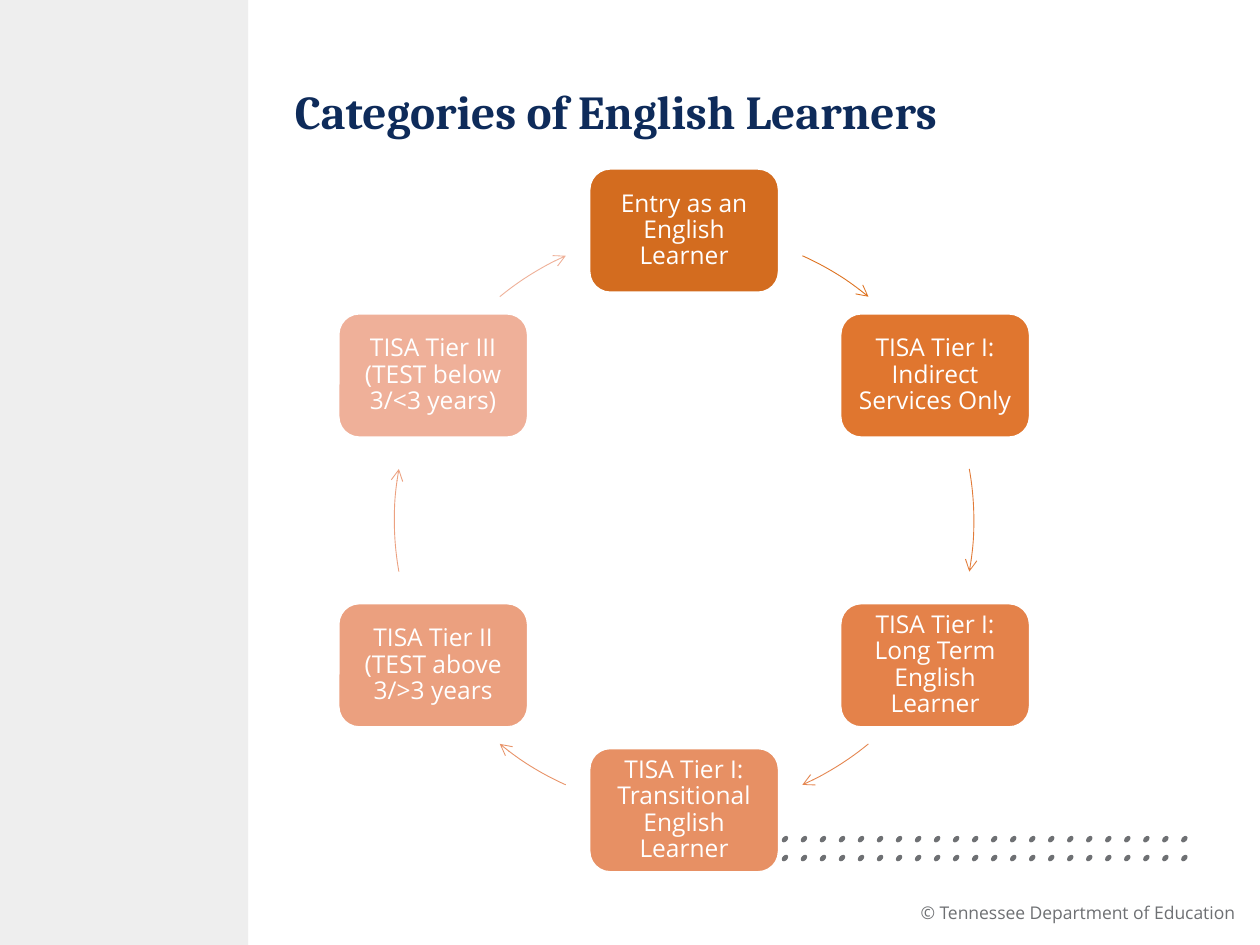
import math

from lxml import etree
from pptx import Presentation
from pptx.dml.color import RGBColor
from pptx.enum.shapes import MSO_SHAPE
from pptx.enum.text import MSO_ANCHOR, PP_ALIGN
from pptx.oxml.ns import qn
from pptx.util import Inches, Pt

RECTANGLE, ELLIPSE = MSO_SHAPE.RECTANGLE, MSO_SHAPE.OVAL
ROUNDED, ARC = MSO_SHAPE.ROUNDED_RECTANGLE, MSO_SHAPE.ARC
LEFT, CENTER, RIGHT = PP_ALIGN.LEFT, PP_ALIGN.CENTER, PP_ALIGN.RIGHT
MIDDLE, TOP = MSO_ANCHOR.MIDDLE, MSO_ANCHOR.TOP

WHITE = RGBColor(0xFF, 0xFF, 0xFF)
PANEL_GRAY = RGBColor(0xEE, 0xEE, 0xEE)
GRAY = RGBColor(0x6E, 0x70, 0x73)
NAVY = RGBColor(0x0E, 0x2B, 0x5A)

TITLE_FONT = {"name": "Cambria", "size": Pt(27), "bold": True}
STAGE_FONT = {"name": "Open Sans", "size": Pt(14)}
FOOTER_FONT = {"name": "Open Sans", "size": Pt(10)}

# Wording, box colour, colour of the arrow that follows, its middle and half sweep in degrees
STAGES = [
    ("Entry as an English Learner",
     RGBColor(0xD3, 0x6C, 0x1F), RGBColor(0xDE, 0x72, 0x20), -58.2, 7.7),
    ("TISA Tier I: Indirect Services Only",
     RGBColor(0xE0, 0x76, 0x2F), RGBColor(0xE2, 0x7B, 0x38), 0, 10.2),
    ("TISA Tier I: Long Term English Learner",
     RGBColor(0xE4, 0x82, 0x4A), RGBColor(0xE5, 0x86, 0x50), 58.2, 7.7),
    ("TISA Tier I: Transitional English Learner",
     RGBColor(0xE7, 0x90, 0x64), RGBColor(0xE8, 0x93, 0x68), 121.8, 7.7),
    ("TISA Tier II (TEST above 3/>3 years",
     RGBColor(0xEB, 0xA0, 0x7F), RGBColor(0xEC, 0xA1, 0x80), 180, 10.2),
    ("TISA Tier III\n(TEST below 3/<3 years)",
     RGBColor(0xEF, 0xB0, 0x99), RGBColor(0xEF, 0xB0, 0x98), 238.2, 7.7),
]


def write_text(text_frame, text, font, color, alignment, anchor):
    text_frame.word_wrap = True
    text_frame.vertical_anchor = anchor
    paragraph = text_frame.paragraphs[0]
    paragraph.text = text
    paragraph.alignment = alignment
    paragraph.line_spacing = 0.9
    for run in paragraph.runs:
        for name, value in font.items():
            setattr(run.font, name, value)
        run.font.color.rgb = color


def add_filled_shape(slide, kind, box, color):
    shape = slide.shapes.add_shape(kind, *box)
    shape.shadow.inherit = False
    shape.fill.solid()
    shape.fill.fore_color.rgb = color
    shape.line.fill.background()
    return shape


def add_title(slide, left, top, width, height):
    title = slide.shapes.title
    title.left, title.top, title.width, title.height = left, top, width, height
    write_text(title.text_frame, "Categories of English Learners",
               TITLE_FONT, NAVY, LEFT, MIDDLE)


def add_footer(slide, left, top, width, height):
    footer = slide.shapes.add_textbox(left, top, width, height)
    write_text(footer.text_frame, "© Tennessee Department of Education",
               FOOTER_FONT, GRAY, RIGHT, TOP)


def add_dots(slide, left, top, width, height, columns=22, rows=2):
    """Spread tilted dots evenly over the box."""
    dot_width, dot_height = Inches(0.06), Inches(0.04)
    column_step = (width - dot_width) / (columns - 1)
    row_step = (height - dot_height) / (rows - 1)
    for row in range(rows):
        for column in range(columns):
            box = (int(left + column * column_step), int(top + row * row_step),
                   dot_width, dot_height)
            add_filled_shape(slide, ELLIPSE, box, GRAY).rotation = 314.4


def add_stage(slide, left, top, width, height, text, color):
    stage = add_filled_shape(slide, ROUNDED, (left, top, width, height), color)
    stage.line.color.rgb = WHITE
    stage.line.width = Pt(1)
    for side in ("left", "top", "right", "bottom"):
        setattr(stage.text_frame, f"margin_{side}", Inches(0.06))
    write_text(stage.text_frame, text, STAGE_FONT, WHITE, CENTER, MIDDLE)


def add_arc_arrow(slide, box, color, middle, half_sweep):
    arrow = slide.shapes.add_shape(ARC, *box)
    arrow.shadow.inherit = False
    arrow.fill.background()
    # Arc angles are stored in 1/60000 degree, adjustments in 1/100000
    for index, angle in enumerate((middle - half_sweep, middle + half_sweep)):
        arrow.adjustments[index] = angle % 360 * 0.6
    arrow.line.color.rgb = color
    arrow.line.width = Pt(0.5)
    etree.SubElement(arrow.line._get_or_add_ln(), qn("a:tailEnd"), type="arrow")


def add_cycle(slide, left, top, width, height):
    """Place the stages clockwise from the top of the circle that fills the box."""
    stage_width, stage_height = Inches(1.5), Inches(0.98)
    for index, (text, color, arrow_color, middle, half_sweep) in enumerate(STAGES):
        angle = math.radians(360 / len(STAGES) * index - 90)
        center_x = left + width / 2 * (1 + math.cos(angle))
        center_y = top + height / 2 * (1 + math.sin(angle))
        add_stage(slide, int(center_x - stage_width / 2), int(center_y - stage_height / 2),
                  stage_width, stage_height, text, color)
        add_arc_arrow(slide, (left, top, width, height), arrow_color, middle, half_sweep)


def main():
    presentation = Presentation()
    presentation.slide_width, presentation.slide_height = Inches(10), Inches(7.5)
    slide = presentation.slides.add_slide(presentation.slide_layouts[5])
    add_footer(slide, Inches(6.77), Inches(7.13), Inches(3.13), Inches(0.25))
    add_filled_shape(slide, RECTANGLE, (0, 0, Inches(1.97), Inches(7.5)), PANEL_GRAY)
    add_dots(slide, Inches(6.2), Inches(6.64), Inches(3.23), Inches(0.19))
    add_title(slide, Inches(2.24), Inches(0.25), Inches(7.37), Inches(1.32))
    add_cycle(slide, Inches(3.13), Inches(1.83), Inches(4.6), Inches(4.6))
    presentation.save("out.pptx")


if __name__ == "__main__":
    main()
